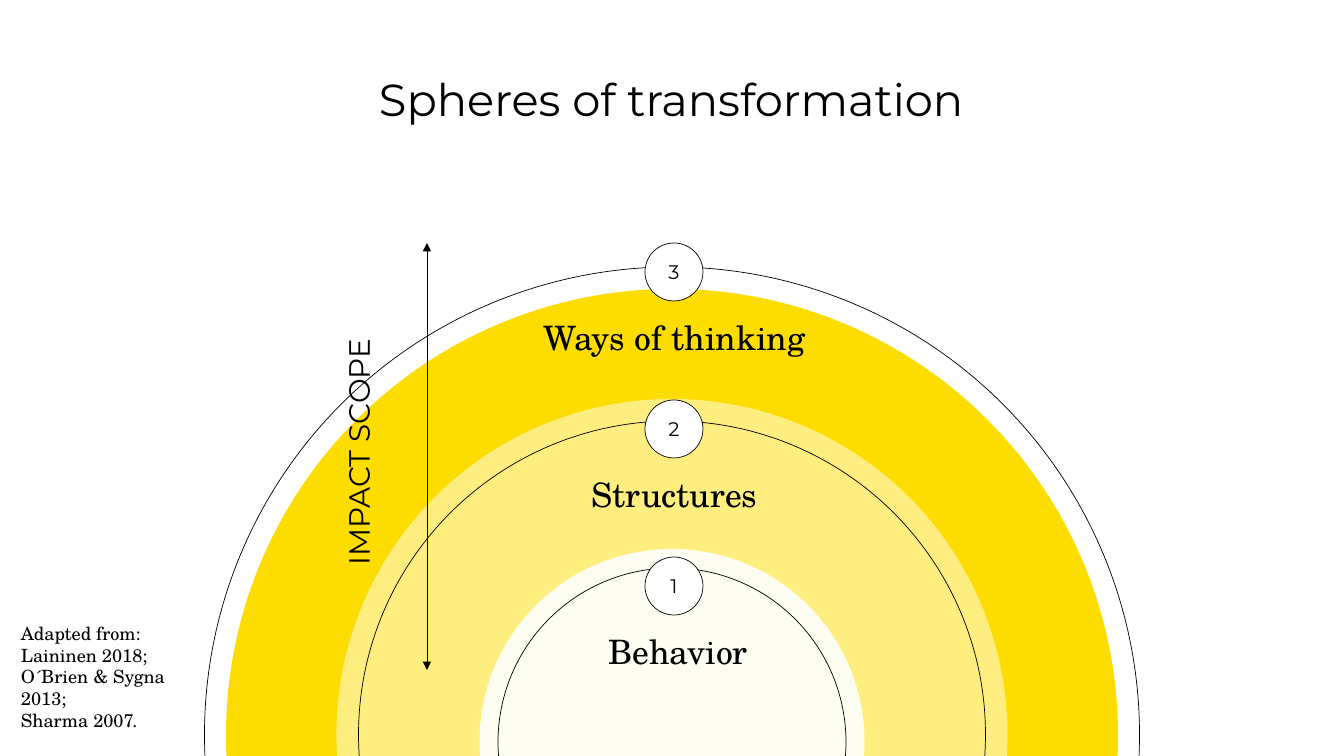
from dataclasses import dataclass
from lxml.etree import SubElement
from pptx import Presentation
from pptx.dml.color import RGBColor
from pptx.enum.shapes import MSO_CONNECTOR, MSO_SHAPE
from pptx.enum.text import MSO_ANCHOR, PP_ALIGN
from pptx.oxml.ns import qn
from pptx.util import Pt


@dataclass(frozen=True)
class Theme:
    ink: RGBColor = RGBColor.from_string("000000")
    paper: RGBColor = RGBColor.from_string("FFFFFF")
    yellow: RGBColor = RGBColor.from_string("FDDD00")
    sans: str = "Montserrat"
    serif: str = "TeX Gyre Schola"
    title: int = 32
    label: int = 24
    axis: int = 21
    number: int = 14
    source: int = 13
    hairline: float = 0.5


theme = Theme()
PX = 914400 / 100.8
CENTER = 672


def write(shape, text, font, size, align=PP_ALIGN.CENTER, anchor=MSO_ANCHOR.TOP, inset=0, wrap=True):
    frame = shape.text_frame
    frame.word_wrap = wrap
    frame.vertical_anchor = anchor
    frame.margin_left = frame.margin_right = frame.margin_top = frame.margin_bottom = round(inset * PX)
    paragraph = frame.paragraphs[0]
    paragraph.text = text
    paragraph.alignment = align
    paragraph.font.name = font
    paragraph.font.size = Pt(size)
    paragraph.font.color.rgb = theme.ink


def add_circle(left, top, diameter, fill=None, opacity=100, outlined=False):
    shape = slide.shapes.add_shape(MSO_SHAPE.OVAL, *[round(v * PX) for v in (left, top, diameter, diameter)])
    shape.shadow.inherit = False
    if fill is None:
        shape.fill.background()
    else:
        shape.fill.solid()
        shape.fill.fore_color.rgb = fill
    if opacity < 100:
        color = shape.fill._xPr.find(qn("a:solidFill"))[0]
        SubElement(color, qn("a:alpha"), val=str(opacity * 1000))
    if outlined:
        shape.line.color.rgb = theme.ink
        shape.line.width = Pt(theme.hairline)
    else:
        shape.line.fill.background()
    return shape


presentation = Presentation()
presentation.slide_width = round(1344 * PX)
presentation.slide_height = round(756 * PX)
slide = presentation.slides.add_slide(presentation.slide_layouts[6])

discs = [(289, 892, theme.yellow, 100), (399, 671, theme.paper, 50), (549, 385, theme.paper, 90)]
for top, diameter, fill, opacity in discs:
    add_circle(CENTER - diameter / 2, top, diameter, fill, opacity)

for top, diameter in [(267, 935), (421, 627), (568, 348)]:
    add_circle(CENTER - diameter / 2, top, diameter, outlined=True)

title = slide.shapes.add_textbox(*[round(v * PX) for v in (68, 39, 1207, 119)])
write(title, "Spheres of transformation", theme.sans, theme.title, anchor=MSO_ANCHOR.MIDDLE)

source = slide.shapes.add_textbox(*[round(v * PX) for v in (21, 622, 153, 110)])
write(source, "Adapted from: Laininen 2018;\nO´Brien & Sygna 2013;\nSharma 2007.",
      theme.serif, theme.source, align=PP_ALIGN.LEFT)

spheres = [("Behavior", 439, 478), ("Structures", 533, 283), ("Ways of thinking", 533, 283)]
for index, (name, left, width) in enumerate(spheres):
    badge_top = 557 - 157 * index
    label = slide.shapes.add_textbox(*[round(v * PX) for v in (left, badge_top + 69, width, 47)])
    write(label, name, theme.serif, theme.label, inset=5)
    badge = add_circle(645, badge_top, 58, theme.paper, outlined=True)
    write(badge, str(index + 1), theme.sans, theme.number, anchor=MSO_ANCHOR.MIDDLE, wrap=False)

arrow = slide.shapes.add_connector(MSO_CONNECTOR.STRAIGHT, *[round(v * PX) for v in (427, 670, 427, 243)])
arrow.line.color.rgb = theme.ink
arrow.line.width = Pt(theme.hairline)
for end in ("a:headEnd", "a:tailEnd"):
    SubElement(arrow.line._get_or_add_ln(), qn(end), type="triangle")
SubElement(arrow._element.spPr, qn("a:effectLst"))

scope = slide.shapes.add_textbox(*[round(v * PX) for v in (215, 426, 293, 52)])
scope.rotation = 270
write(scope, "IMPACT SCOPE", theme.sans, theme.axis, inset=5)

presentation.save("out.pptx")
